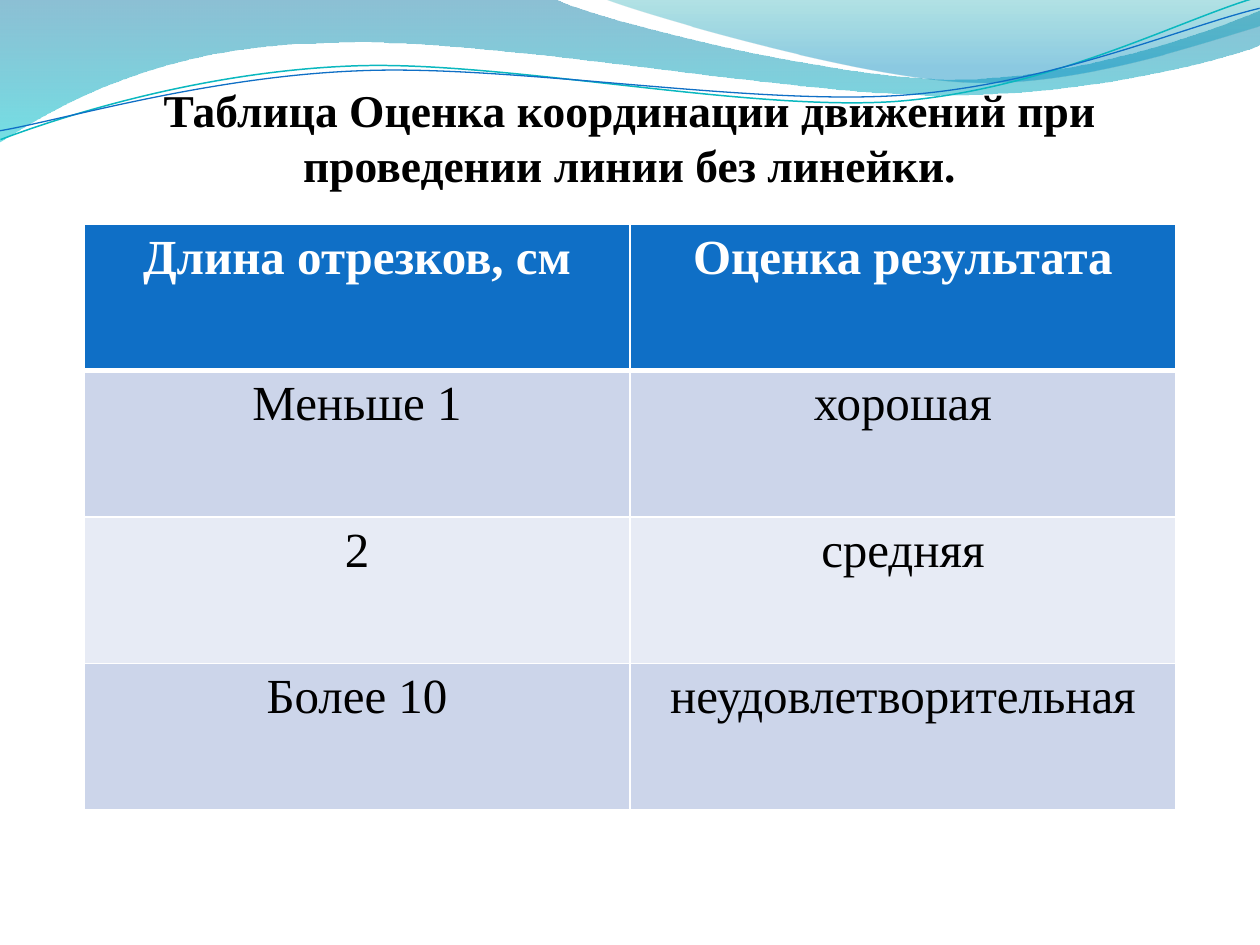
from lxml import etree
from pptx import Presentation
from pptx import util as u
from pptx.dml.color import RGBColor
from pptx.enum import text
from pptx.oxml.ns import qn

EMU = 914400 / 126
FONT = "Times New Roman"
C = {"blue": "0F6FC6", "teal": "0AB8BF", "white": "FFFFFF", "black": "000000",
     "band": "CCD5EA", "pale": "E7EBF5"}


def px(n):
    return u.Emu(round(n * EMU))


def add_curve(slide, pieces, close):
    """Draw points (straight) and (control, control, end) triples (cubic curves)."""
    ends = [piece if len(piece) == 2 else piece[-1] for piece in pieces]
    fb = slide.shapes.build_freeform(*ends[0], scale=EMU)
    fb.add_line_segments(ends[1:], close=close)
    sp = fb.convert_to_shape()
    left, top = (min(axis) for axis in zip(*ends))
    segments = list(sp._element.iter(qn("a:lnTo")))
    for seg, piece in zip(segments, pieces[1:]):
        if len(piece) == 3:
            bez = etree.Element(qn("a:cubicBezTo"))
            for x, y in piece:
                etree.SubElement(bez, qn("a:pt"), x=str(x - left), y=str(y - top))
            seg.getparent().replace(seg, bez)
    return sp


prs = Presentation()
prs.slide_width, prs.slide_height = px(1260), px(945)
slide = prs.slides.add_slide(prs.slide_layouts[1])
title, body = slide.placeholders
title._element.getparent().remove(title._element)

# Waves: gradient stops are (position, colour, opacity %); lines are (colour, width)
waves = [
    {"grad": [(0, "0074A1", 45), (1, "00C6CF", 55)],
     "pieces": [(0, 0), (554, -1), ((600, 21), (837, 79), (955, 79)),
                ((1075, 79), (1207, 33), (1260, 11)), (1261, 45),
                ((1239, 55), (1096, 96), (940, 95)), ((784, 95), (481, 35), (324, 43)),
                ((163, 45), (58, 105), (-1, 142))]},
    {"grad": [(0, "00A1A9", 30), (0.8, "008BBF", 45)],
     "pieces": [(604, -1), ((641, 14), (859, 78), (969, 82)),
                ((1079, 87), (1211, 40), (1260, 26)), (1260, 0)]},
    {"line": ("teal", 0.85),
     "pieces": [(-2, 110), ((59, 90), (200, 52), (350, 53)),
                ((499, 53), (745, 118), (896, 114)), ((1049, 109), (1184, 45), (1260, 27))]},
    {"line": ("blue", 0.75),
     "pieces": [(-2, 101), ((57, 94), (207, 57), (357, 58)),
                ((509, 58), (750, 112), (902, 108)), ((1052, 104), (1187, 52), (1262, 38))]},
]
for wave in waves:
    sp = add_curve(slide, wave["pieces"], "grad" in wave)
    sp.shadow.inherit = False
    if "grad" in wave:
        sp.line.fill.background()
        sp.fill.gradient()
        sp.fill.gradient_angle = 270
        for stop, (pos, color, _) in zip(sp.fill.gradient_stops, wave["grad"]):
            stop.position = pos
            stop.color.rgb = RGBColor.from_string(color)
        for clr, (_, _, alpha) in zip(sp._element.spPr.iter(qn("a:srgbClr")), wave["grad"]):
            etree.SubElement(clr, qn("a:alpha"), val=str(alpha * 1000))
    else:
        color, width = wave["line"]
        sp.rotation = 357.3
        sp.fill.background()
        sp.line.color.rgb = RGBColor.from_string(C[color])
        sp.line.width = u.Pt(width)

# Heading in the body placeholder, in front of the waves
slide.shapes._spTree.append(body._element)
for name, n in {"left": 63, "top": 76, "width": 1134, "height": 796}.items():
    setattr(body, name, px(n))
p = body.text_frame.paragraphs[0]
p.alignment = text.PP_ALIGN.CENTER
pPr = p._p.get_or_add_pPr()
pPr.set("marL", "0")
pPr.set("indent", "0")
etree.SubElement(pPr, qn("a:buNone"))
r = p.add_run()
r.text = "Таблица Оценка координации движений при проведении линии без линейки."
for name, value in {"name": FONT, "size": u.Pt(26), "bold": True}.items():
    setattr(r.font, name, value)
r.font.color.rgb = RGBColor.from_string(C["black"])

# Table
rows = [("Длина отрезков, см", "Оценка результата"),
        ("Меньше 1", "хорошая"),
        ("2", "средняя"),
        ("Более 10", "неудовлетворительная")]
table = slide.shapes.add_table(4, 2, px(84), px(224), px(1092), px(586)).table
for i, row in enumerate(rows):
    head = i == 0
    for j, words in enumerate(row):
        cell = table.cell(i, j)
        tcPr = cell._tc.get_or_add_tcPr()
        for side in "LRTB":
            thick = (i, side) in [(0, "B"), (1, "T")]
            ln = etree.SubElement(tcPr, qn("a:ln" + side), w=str(u.Pt(3 if thick else 1)))
            fill = etree.SubElement(ln, qn("a:solidFill"))
            etree.SubElement(fill, qn("a:srgbClr"), val=C["white"])
        cell.fill.solid()
        cell.fill.fore_color.rgb = RGBColor.from_string(
            C["blue" if head else "band" if i % 2 else "pale"])
        p = cell.text_frame.paragraphs[0]
        p.alignment = text.PP_ALIGN.CENTER
        r = p.add_run()
        r.text = words
        for name, value in {"name": FONT, "size": u.Pt(28), "bold": head}.items():
            setattr(r.font, name, value)
        r.font.color.rgb = RGBColor.from_string(C["white" if head else "black"])

prs.save("out.pptx")
